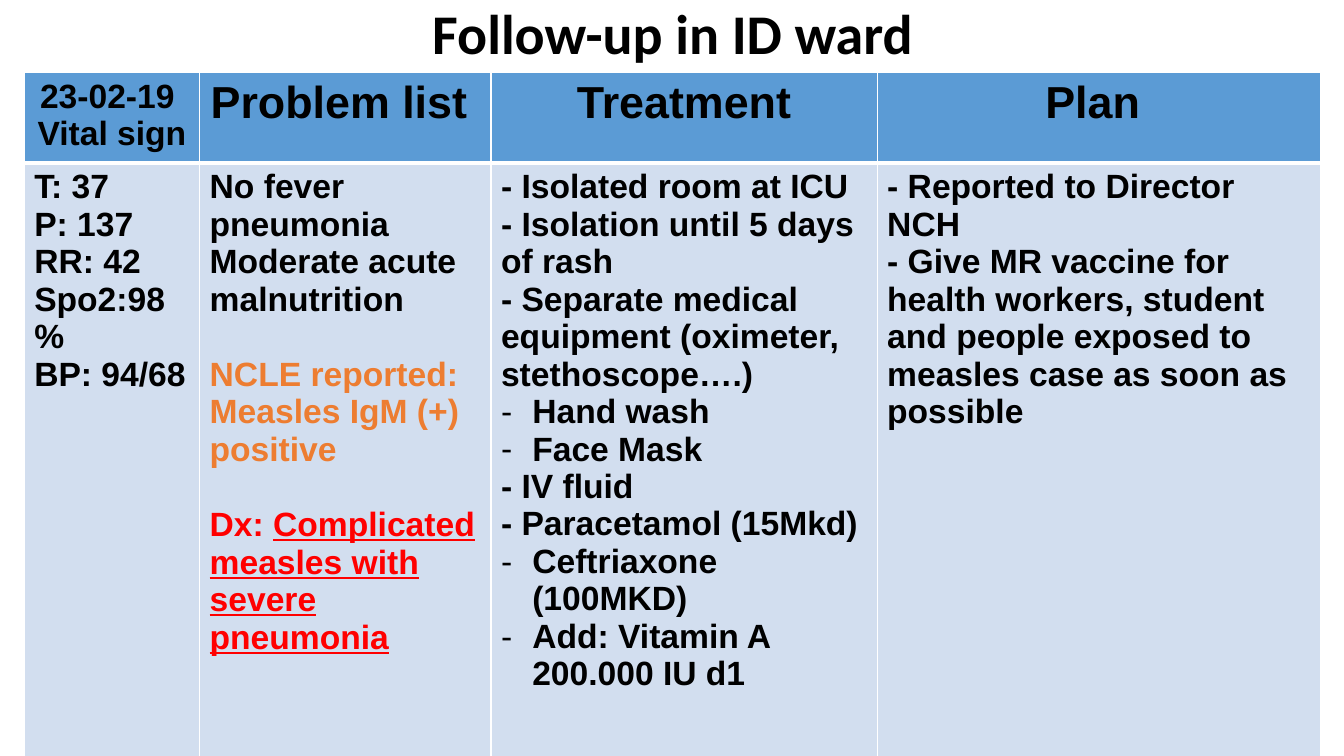
"""Build the ward follow-up slide: a title above a four-column table."""
from lxml.etree import SubElement
from pptx import Presentation
from pptx.dml.color import RGBColor
from pptx.enum.text import MSO_ANCHOR, PP_ALIGN
from pptx.oxml.ns import qn
from pptx.util import Pt

PX = 9144
BLACK = RGBColor(0x00, 0x00, 0x00)
WHITE = RGBColor(0xFF, 0xFF, 0xFF)
BLUE = RGBColor(0x5B, 0x9B, 0xD5)
PALE = RGBColor(0xD2, 0xDE, 0xEF)
ORANGE = RGBColor(0xED, 0x7D, 0x31)
RED = RGBColor(0xFF, 0x00, 0x00)

WIDTHS = [174, 289, 383, 440]
HEIGHTS = [83, 596]
HEADERS = [
    (24, ["23-02-19 ", "Vital sign "]),
    (32, ["Problem list "]),
    (32, ["Treatment"]),
    (32, ["Plan "]),
]
VITALS = ["T: 37", "P: 137", "RR: 42", "Spo2:98%", "BP: 94/68"]
PROBLEMS = ["No fever", "pneumonia", "Moderate acute malnutrition"]
REPORT = "NCLE reported: Measles IgM (+) positive"
DIAGNOSIS = "Complicated measles with severe pneumonia"
TREATMENT = [
    ("- Isolated room at ICU", False),
    ("- Isolation until 5 days of rash", False),
    ("- Separate medical equipment (oximeter, stethoscope….)", False),
    ("Hand wash", True),
    ("Face Mask", True),
    ("- IV fluid", False),
    ("- Paracetamol (15Mkd)", False),
    ("Ceftriaxone (100MKD)", True),
    ("Add: Vitamin A 200.000 IU d1", True),
]
PLAN = [
    "- Reported to Director NCH",
    "- Give MR vaccine for health workers, student and people exposed to measles case as soon as possible",
]


def add_run(p, text, size=24, color=BLACK, font="Arial", underline=False):
    r = p.add_run()
    r.text = text
    r.font.name = font
    r.font.size = Pt(size)
    r.font.bold = True
    r.font.color.rgb = color
    if underline:
        r.font.underline = True


def next_paragraph(tf):
    return tf.add_paragraph() if tf.paragraphs[0].runs else tf.paragraphs[0]


prs = Presentation()
prs.slide_width = 1333 * PX
prs.slide_height = 750 * PX
s = prs.slides.add_slide(prs.slide_layouts[6])

title = s.shapes.add_textbox(92 * PX, 0, 1150 * PX, 72 * PX)
tf = title.text_frame
tf.word_wrap = True
tf.vertical_anchor = MSO_ANCHOR.MIDDLE
p = tf.paragraphs[0]
p.alignment = PP_ALIGN.CENTER
p.line_spacing = 0.9
add_run(p, "Follow-up in ID ward", 40, font="Calibri")

table = s.shapes.add_table(
    len(HEIGHTS), len(WIDTHS), 24 * PX, 72 * PX, sum(WIDTHS) * PX, sum(HEIGHTS) * PX
).table
for column, width in zip(table.columns, WIDTHS):
    column.width = width * PX
for row, height in zip(table.rows, HEIGHTS):
    row.height = height * PX

for i, (row, fill) in enumerate(zip(table.rows, [BLUE, PALE])):
    edges = {"lnL": 1, "lnR": 1, "lnT": 3 if i else 1, "lnB": 1 if i else 3}
    for cell in row.cells:
        tcPr = cell._tc.get_or_add_tcPr()
        for tag, weight in edges.items():
            ln = SubElement(tcPr, qn(f"a:{tag}"), w=str(Pt(weight)))
            SubElement(SubElement(ln, qn("a:solidFill")), qn("a:srgbClr"), val=str(WHITE))
        cell.fill.solid()
        cell.fill.fore_color.rgb = fill

for column, (size, lines) in enumerate(HEADERS):
    tf = table.cell(0, column).text_frame
    for line in lines:
        p = next_paragraph(tf)
        p.alignment = PP_ALIGN.CENTER
        add_run(p, line, size)

for column, lines in enumerate([VITALS, PROBLEMS, [], PLAN]):
    tf = table.cell(1, column).text_frame
    for line in lines:
        add_run(next_paragraph(tf), line)

tf = table.cell(1, 1).text_frame
for parts in [[(REPORT, ORANGE, False)], [("Dx: ", RED, False), (DIAGNOSIS, RED, True)]]:
    p = next_paragraph(tf)
    p.space_before = Pt(27)
    for text, color, underline in parts:
        add_run(p, text, color=color, underline=underline)

tf = table.cell(1, 2).text_frame
for text, bulleted in TREATMENT:
    p = next_paragraph(tf)
    if bulleted:
        pPr = p._p.get_or_add_pPr()
        pPr.set("marL", str(31 * PX))
        pPr.set("indent", str(-31 * PX))
        SubElement(pPr, qn("a:buFont"), typeface="Arial")
        SubElement(pPr, qn("a:buChar"), char="-")
    add_run(p, text)

prs.save("out.pptx")
